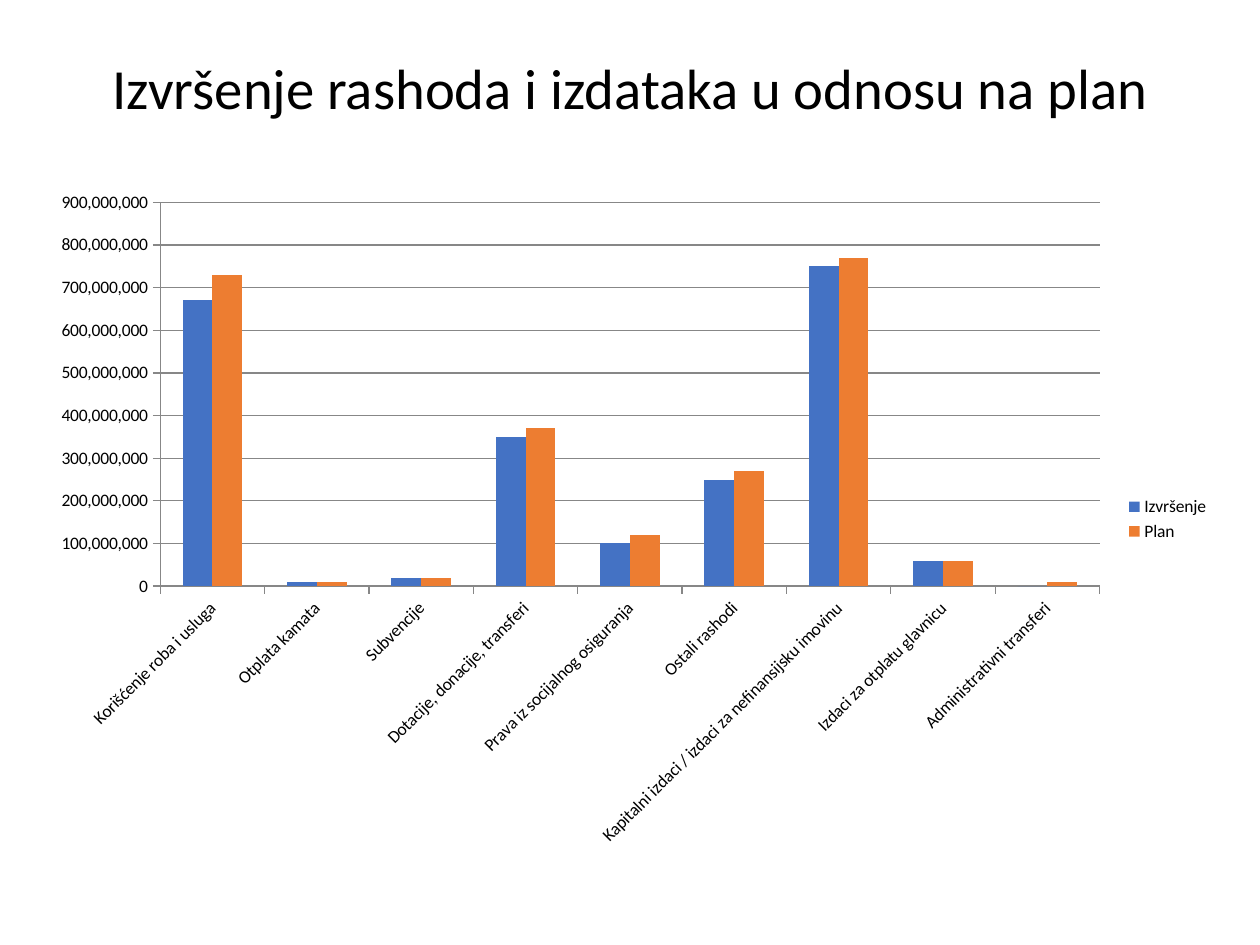
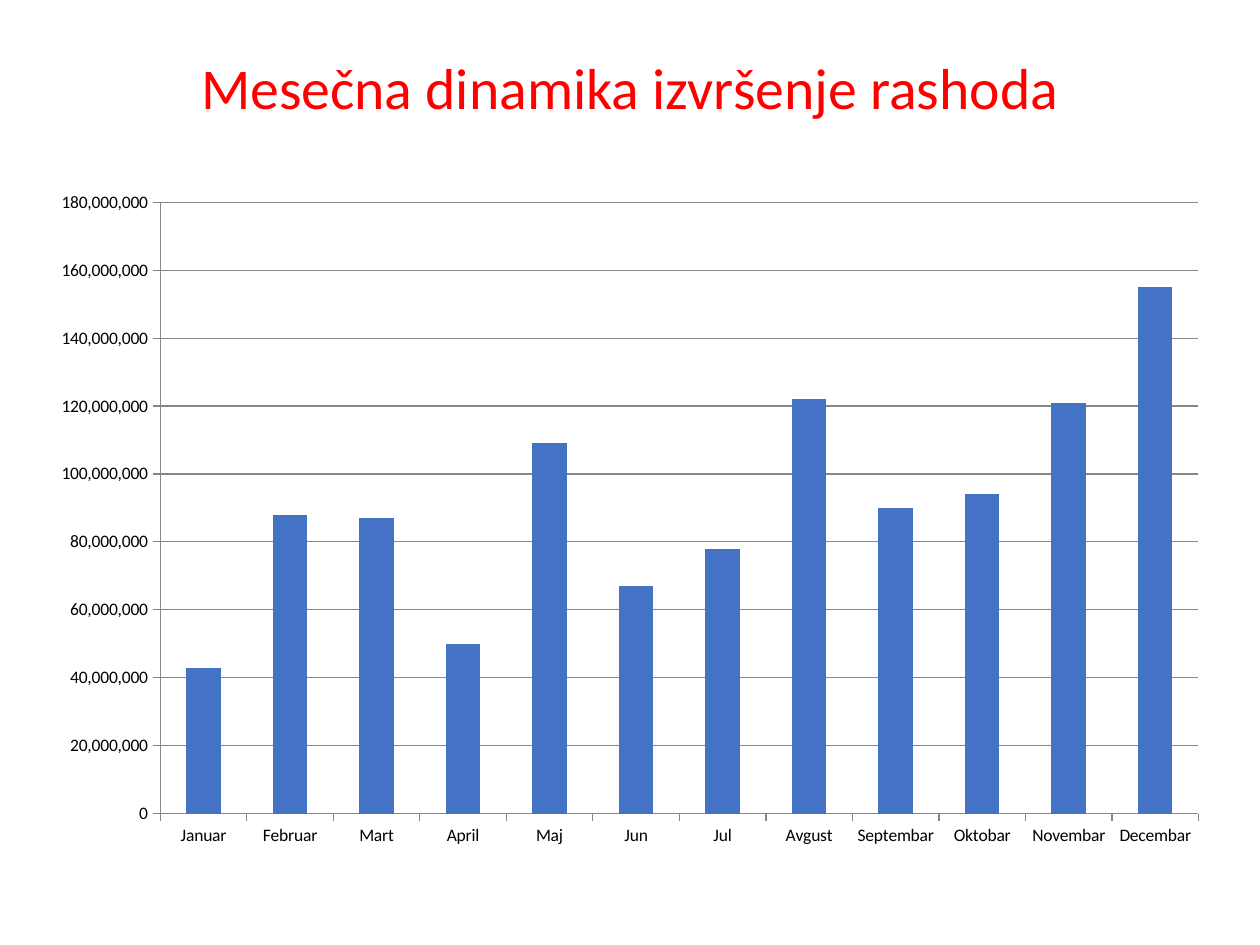
from pptx import Presentation
from pptx.chart.data import CategoryChartData as Data
from pptx.dml.color import RGBColor
from pptx.enum.chart import XL_CHART_TYPE as Kind, XL_LEGEND_POSITION as Side
from pptx.enum.chart import XL_TICK_MARK as Tick
from pptx.enum.text import MSO_ANCHOR as Anchor, PP_ALIGN as Align
from pptx.util import Inches, Pt

BLACK = RGBColor(0x00, 0x00, 0x00)
RED = RGBColor(0xFF, 0x00, 0x00)
GRAY = RGBColor(0x87, 0x87, 0x87)
BLUE = RGBColor(0x44, 0x72, 0xC4)
ORANGE = RGBColor(0xED, 0x7D, 0x31)
FONT = "Calibri"
LEFT, WIDTH = Inches(0.3), Inches(9.4)
MILLION = 1_000_000

ITEMS = [
    "Korišćenje roba i usluga", "Otplata kamata", "Subvencije",
    "Dotacije, donacije, transferi", "Prava iz socijalnog osiguranja",
    "Ostali rashodi", "Kapitalni izdaci / izdaci za nefinansijsku imovinu",
    "Izdaci za otplatu glavnicu", "Administrativni transferi",
]
SPENT = [670, 10, 20, 350, 100, 250, 750, 60, 0]
PLAN = [730, 10, 20, 370, 120, 270, 770, 60, 10]

MONTHS = [
    "Januar", "Februar", "Mart", "April", "Maj", "Jun",
    "Jul", "Avgust", "Septembar", "Oktobar", "Novembar", "Decembar",
]
MONTHLY = [43, 88, 87, 50, 109, 67, 78, 122, 90, 94, 121, 155]


class Deck:
    def __init__(self):
        self.prs = Presentation()
        self.prs.slide_width, self.prs.slide_height = Inches(10), Inches(7.5)
        self.slide = None

    def page(self):
        self.slide = self.prs.slides.add_slide(self.prs.slide_layouts[6])

    def style(self, font, size, color):
        font.name, font.size = FONT, Pt(size)
        font.color.rgb = color

    def title(self, text, size, color):
        box = self.slide.shapes.add_textbox(LEFT, Inches(0.25), WIDTH, Inches(1.17))
        frame = box.text_frame
        frame.word_wrap = True
        frame.vertical_anchor = Anchor.BOTTOM
        frame.margin_bottom = Inches(0.45)
        para = frame.paragraphs[0]
        para.alignment, para.line_spacing = Align.CENTER, 0.9
        run = para.add_run()
        run.text = text
        self.style(run.font, size, color)

    def columns(self, cats, series, top, step, slant=0):
        """Draw columns; values, top and step are in millions, slant in degrees."""
        data = Data(number_format="#,##0")
        data.categories = cats
        for name, vals, _ in series:
            data.add_series(name, [val * MILLION for val in vals])
        chart = self.slide.shapes.add_chart(
            Kind.COLUMN_CLUSTERED, LEFT, Inches(1.42), WIDTH, Inches(5.4), data
        ).chart
        self.style(chart.font, 10, BLACK)
        chart.has_title = False
        chart.has_legend = len(series) > 1
        if chart.has_legend:
            chart.legend.position = Side.RIGHT
            chart.legend.include_in_layout = False
            self.style(chart.legend.font, 10, BLACK)

        plot = chart.plots[0]
        plot.gap_width, plot.overlap = 150, 0
        plot.vary_by_categories = False
        for bar, (_, _, color) in zip(plot.series, series):
            bar.format.fill.solid()
            bar.format.fill.fore_color.rgb = color
            bar.invert_if_negative = False
        self.axes(chart, top, step, slant)

    def axes(self, chart, top, step, slant):
        across, up = chart.category_axis, chart.value_axis
        up.minimum_scale, up.maximum_scale = 0, top * MILLION
        up.major_unit = step * MILLION
        up.has_major_gridlines = True
        up.tick_labels.number_format = "#,##0"
        up.tick_labels.number_format_is_linked = False
        for axis in (across, up):
            axis.major_tick_mark, axis.minor_tick_mark = Tick.OUTSIDE, Tick.NONE
            self.style(axis.tick_labels.font, 10, BLACK)
        for part in (across, up, up.major_gridlines):
            part.format.line.color.rgb = GRAY
            part.format.line.width = Pt(0.75)
        if slant:
            across._element.txPr.bodyPr.set("rot", str(slant * 60000))


def main():
    deck = Deck()

    deck.page()
    deck.title("Izvršenje rashoda i izdataka u odnosu na plan", 32.4, BLACK)
    deck.columns(ITEMS, [("Izvršenje", SPENT, BLUE), ("Plan", PLAN, ORANGE)],
                 top=900, step=100, slant=-45)

    deck.page()
    deck.title("Mesečna dinamika izvršenje rashoda", 33, RED)
    deck.columns(MONTHS, [("Series 1", MONTHLY, BLUE)], top=180, step=20)

    deck.prs.save("out.pptx")


if __name__ == "__main__":
    main()
